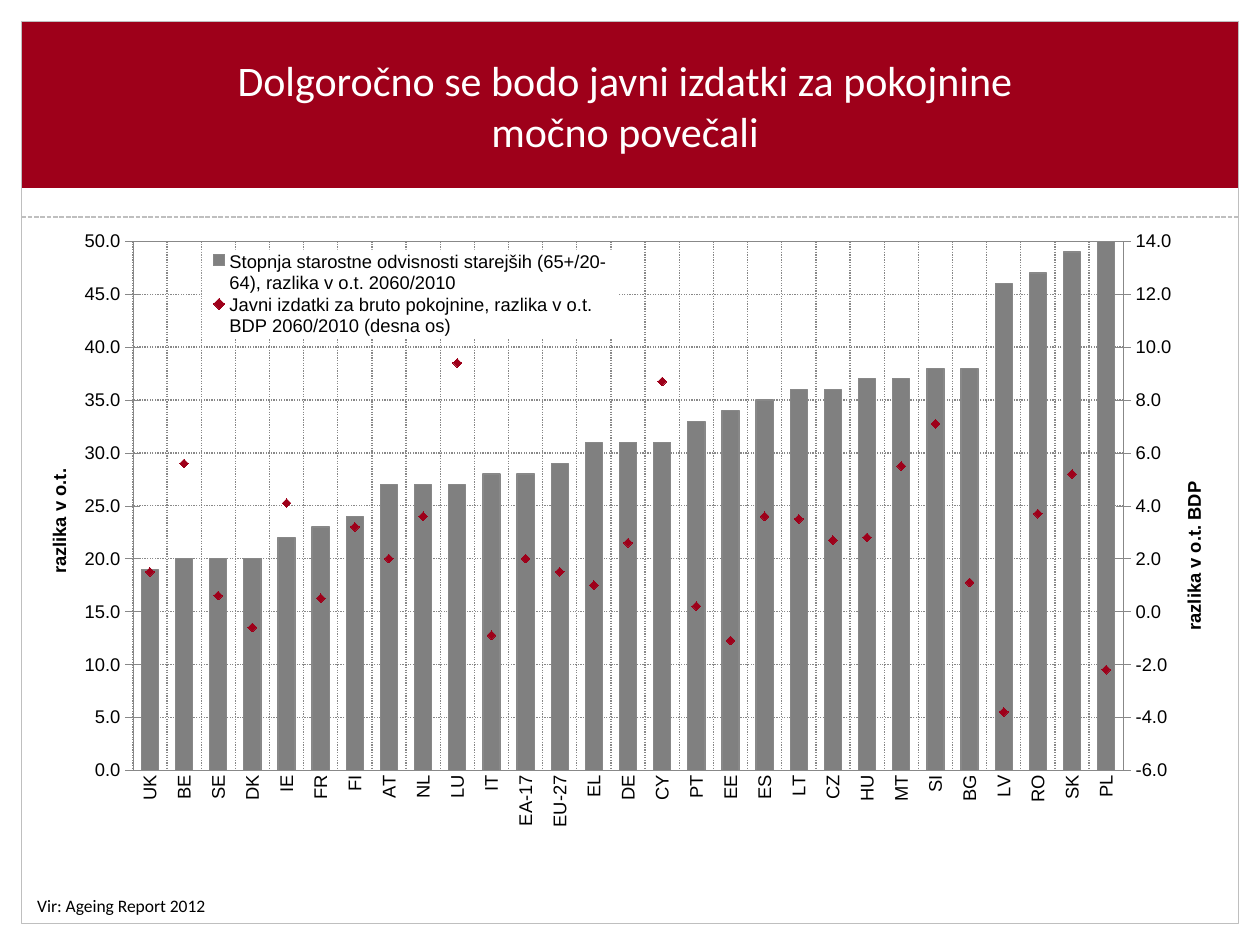
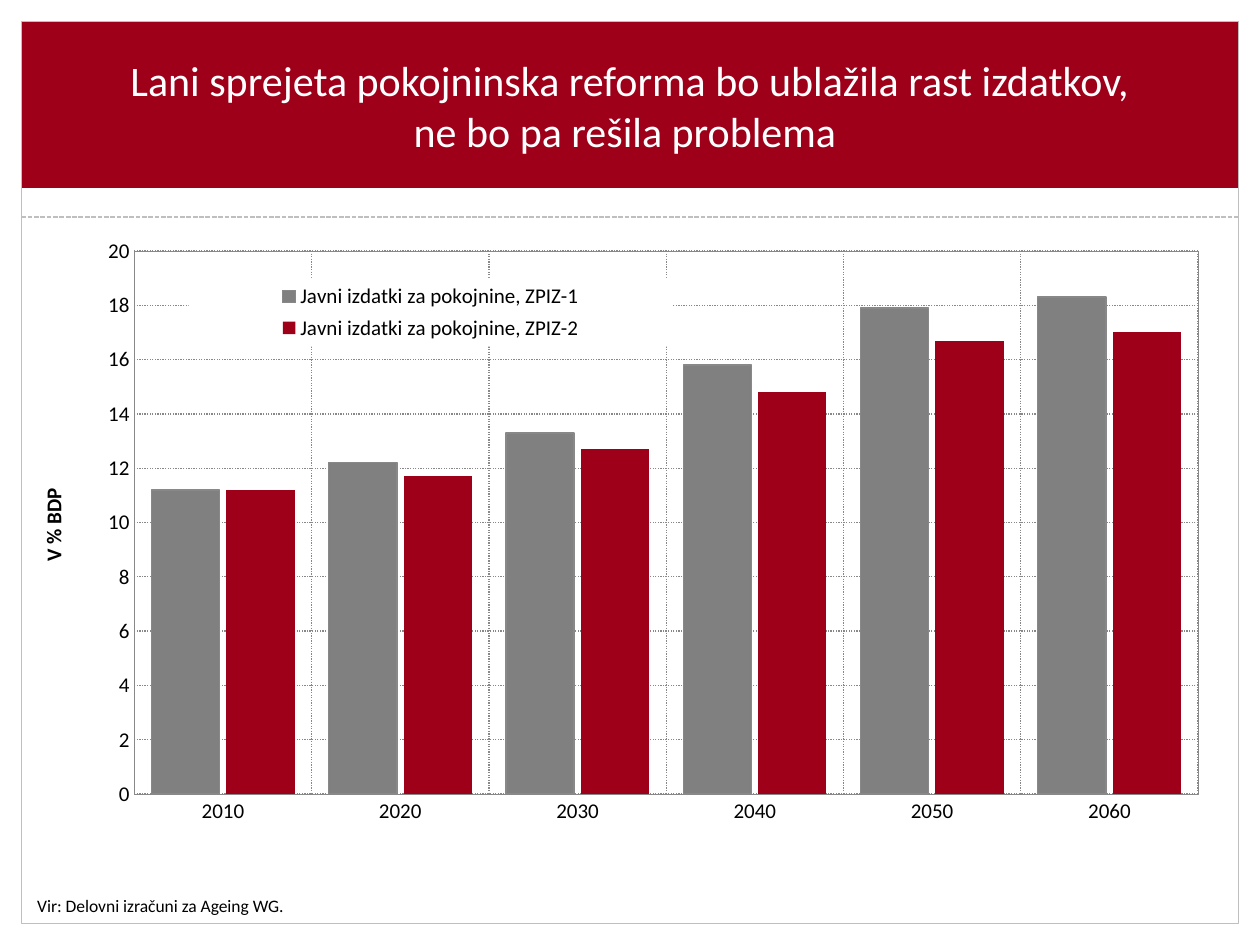
import copy

import pptx
import pptx.chart.axis
import pptx.chart.data
import pptx.dml.color
import pptx.enum.chart
import pptx.enum.dml
import pptx.enum.shapes
import pptx.enum.text
import pptx.oxml
import pptx.oxml.ns
import pptx.util
from pptx.util import Cm, Pt

COLORS = {
    "band": "9E001A",
    "frame": "BFBFBF",
    "bar": "808080",
    "grid": "888888",
    "text": "000000",
    "white": "FFFFFF",
}
TITLE_FONT = "Calibri"
NS = pptx.oxml.ns.nsdecls("c", "a")
qn = pptx.oxml.ns.qn
Tick = pptx.enum.chart.XL_TICK_MARK

DEPENDENCY = {
    "UK": (19, 1.5), "BE": (20, 5.6), "SE": (20, 0.6), "DK": (20, -0.6),
    "IE": (22, 4.1), "FR": (23, 0.5), "FI": (24, 3.2), "AT": (27, 2),
    "NL": (27, 3.6), "LU": (27, 9.4), "IT": (28, -0.9), "EA-17": (28, 2),
    "EU-27": (29, 1.5), "EL": (31, 1), "DE": (31, 2.6), "CY": (31, 8.7),
    "PT": (33, 0.2), "EE": (34, -1.1), "ES": (35, 3.6), "LT": (36, 3.5),
    "CZ": (36, 2.7), "HU": (37, 2.8), "MT": (37, 5.5), "SI": (38, 7.1),
    "BG": (38, 1.1), "LV": (46, -3.8), "RO": (47, 3.7), "SK": (49, 5.2),
    "PL": (50, -2.2),
}
DEPENDENCY_NAMES = (
    "Stopnja starostne odvisnosti starejših (65+/20-64), razlika v o.t. 2060/2010",
    "Javni izdatki za bruto pokojnine, razlika v o.t. BDP 2060/2010 (desna os)",
)
REFORM = {
    "2010": (11.2, 11.2), "2020": (12.2, 11.7), "2030": (13.3, 12.7),
    "2040": (15.8, 14.8), "2050": (17.9, 16.7), "2060": (18.3, 17),
}
REFORM_NAMES = (
    "Javni izdatki za pokojnine, ZPIZ-1",
    "Javni izdatki za pokojnine, ZPIZ-2",
)


def rgb(name):
    return pptx.dml.color.RGBColor.from_string(COLORS[name])


def fill_with(fmt, name):
    fmt.fill.solid()
    fmt.fill.fore_color.rgb = rgb(name)


def set_line(line, name, width=0.75):
    line.color.rgb = rgb(name)
    line.width = Pt(width)


def set_font(font, name, size, color="text", bold=False):
    font.name = name
    font.size = Pt(size)
    font.bold = bold
    font.color.rgb = rgb(color)


def add_text(s, box, text, size, color):
    tf = s.shapes.add_textbox(*map(Cm, box)).text_frame
    tf.text = text
    for p in tf.paragraphs:
        for r in p.runs:
            set_font(r.font, TITLE_FONT, size, color)
    return tf


def add_rect(s, box, fill=None):
    sp = s.shapes.add_shape(
        pptx.enum.shapes.MSO_SHAPE.RECTANGLE, *map(Cm, box))
    sp.shadow.inherit = False
    if fill:
        fill_with(sp, fill)
        sp.line.fill.background()
    else:
        sp.fill.background()
        set_line(sp.line, "frame")


def add_frame(s, box):
    """White margins, red title band, grey slide border and dashed divider."""
    x, y, w, h = box
    page_w = w + 2 * x
    for margin in ((0, y + h, page_w, y), (0, 0, page_w, y),
                   (x + w + 0.03, 0, x - 0.03, 19),
                   (x, y + 3.15, w, 0.84)):
        add_rect(s, margin, "white")
    add_rect(s, (x, y, w, 3.36), "band")
    add_rect(s, box)
    divider = s.shapes.add_connector(
        pptx.enum.shapes.MSO_CONNECTOR.STRAIGHT,
        Cm(x), Cm(y + 3.94), Cm(x + w), Cm(y + 3.94))
    set_line(divider.line, "frame", 0.9)
    divider.line.dash_style = pptx.enum.dml.MSO_LINE.SQUARE_DOT
    divider._element.spPr.append(
        pptx.oxml.parse_xml(f"<a:effectLst {NS}/>"))


def add_slide(prs, title, source):
    s = prs.slides.add_slide(prs.slide_layouts[6])
    add_frame(s, (0.43, 0.43, 24.54, 18.19))
    tf = add_text(s, (1.9, 0.73, 21.59, 2.79), title, 24, "white")
    tf.word_wrap = True
    tf.vertical_anchor = pptx.enum.text.MSO_ANCHOR.MIDDLE
    tf.paragraphs[0].alignment = pptx.enum.text.PP_ALIGN.CENTER
    tf = add_text(s, (0.5, 17.92, 5.7, 0.69), source, 10, "text")
    tf.word_wrap = False
    return s


def place(element, index, x, y, w=None, h=None, inner=False):
    """Give a chart part a manual layout, in fractions of the chart."""
    old = element.find(qn("c:layout"))
    if old is not None:
        element.remove(old)
    target = '<c:layoutTarget val="inner"/>' if inner else ""
    size = f'<c:w val="{w}"/><c:h val="{h}"/>' if w else ""
    element.insert(index, pptx.oxml.parse_xml(
        f'<c:layout {NS}><c:manualLayout>{target}<c:xMode val="edge"/>'
        f'<c:yMode val="edge"/><c:x val="{x}"/><c:y val="{y}"/>{size}'
        "</c:manualLayout></c:layout>"))


def style_gridlines(axis):
    axis.has_major_gridlines = True
    line = axis.major_gridlines.format.line
    set_line(line, "grid")
    line.dash_style = pptx.enum.dml.MSO_LINE.ROUND_DOT


def style_value_axis(axis, title, at, scale, number_format, tick, font):
    axis.minimum_scale, axis.maximum_scale, axis.major_unit = scale
    axis.major_tick_mark = tick
    axis.minor_tick_mark = Tick.NONE
    axis.tick_labels.number_format = number_format
    axis.tick_labels.number_format_is_linked = False
    set_font(axis.tick_labels.font, *font)
    set_line(axis.format.line, "grid", 0.25)
    tf = axis.axis_title.text_frame
    tf.text = title
    set_font(tf.paragraphs[0].runs[0].font, *font, bold=True)
    body = tf._txBody.bodyPr
    body.set("rot", "-5400000")
    body.set("vert", "horz")
    place(axis.axis_title._element, 1, *at)


def add_columns(s, box, names, rows, font, gap, overlap, plot_at, legend_at):
    """Column chart with dotted grid and a white legend over the plot."""
    data = pptx.chart.data.CategoryChartData(number_format="0.0")
    data.categories = list(rows)
    for name, values in zip(names, zip(*rows.values())):
        data.add_series(name, values)
    chart = s.shapes.add_chart(
        pptx.enum.chart.XL_CHART_TYPE.COLUMN_CLUSTERED,
        *map(Cm, box), data).chart
    chart.has_title = False
    set_font(chart.font, *font)
    plot = chart.plots[0]
    plot.vary_by_categories = False
    plot.gap_width = gap
    plot.overlap = overlap
    for series, color in zip(plot.series, ("bar", "band")):
        fill_with(series.format, color)
    set_line(plot.series[0].format.line, "grid")

    cat = chart.category_axis
    cat.major_tick_mark = cat.minor_tick_mark = Tick.NONE
    set_font(cat.tick_labels.font, *font)
    set_line(cat.format.line, "grid", 0.25)
    for axis in (cat, chart.value_axis):
        style_gridlines(axis)

    area = chart._chartSpace.chart.plotArea
    place(area, 0, *plot_at, inner=True)
    area.append(pptx.oxml.parse_xml(
        f'<c:spPr {NS}><a:noFill/><a:ln w="3175"><a:solidFill>'
        f'<a:srgbClr val="{COLORS["grid"]}"/></a:solidFill></a:ln></c:spPr>'))

    chart.has_legend = True
    legend = chart.legend
    legend.position = pptx.enum.chart.XL_LEGEND_POSITION.RIGHT
    legend.include_in_layout = False
    set_font(legend.font, *font)
    place(legend._element, 1, *legend_at)
    legend._element.find(qn("c:txPr")).addprevious(pptx.oxml.parse_xml(
        f'<c:spPr {NS}><a:solidFill><a:srgbClr val="{COLORS["white"]}"/>'
        "</a:solidFill></c:spPr>"))
    return chart


def move_to_right_axis(chart):
    """Turn the second series into markers on a new right-hand axis."""
    bars = chart.plots[0]._element
    series = bars.findall(qn("c:ser"))[1]
    inverted = series.find(qn("c:invertIfNegative"))
    if inverted is not None:
        series.remove(inverted)
    lines = pptx.oxml.parse_xml(
        f'<c:lineChart {NS}><c:grouping val="standard"/><c:varyColors val="0"/>'
        '<c:marker val="1"/><c:axId val="5001"/><c:axId val="5002"/></c:lineChart>')
    lines.insert(2, series)
    bars.addnext(lines)

    left = chart.value_axis._element
    right, hidden = copy.deepcopy(left), copy.deepcopy(chart.category_axis._element)
    for element, own, other in ((hidden, "5001", "5002"), (right, "5002", "5001")):
        element.find(qn("c:axId")).set("val", own)
        element.find(qn("c:crossAx")).set("val", other)
    right.find(qn("c:axPos")).set("val", "r")
    right.find(qn("c:crosses")).set("val", "max")
    left.addnext(right)
    right.addnext(hidden)
    hidden_axis = pptx.chart.axis.CategoryAxis(hidden)
    hidden_axis.visible = False
    hidden_axis.has_major_gridlines = False
    right_axis = pptx.chart.axis.ValueAxis(right)
    right_axis.has_major_gridlines = False

    points = chart.plots[1].series[0]
    points.smooth = False
    points.format.line.fill.background()
    points.marker.style = pptx.enum.chart.XL_MARKER_STYLE.DIAMOND
    points.marker.size = 5
    fill_with(points.marker.format, "band")
    set_line(points.marker.format.line, "band")
    return right_axis


def dependency_slide(prs):
    s = add_slide(
        prs, "Dolgoročno se bodo javni izdatki za pokojnine \vmočno povečali ",
        "Vir: Ageing Report 2012")
    font = ("Arial", 10.5)
    chart = add_columns(
        s, (0.71, 4.52, 24, 12.8), DEPENDENCY_NAMES, DEPENDENCY, font, 100, 0,
        (0.082, 0.027, 0.832, 0.833), (0.14, 0.04, 0.35, 0.14))
    left_axis = chart.value_axis
    right_axis = move_to_right_axis(chart)
    style_value_axis(left_axis, "razlika v o.t.", (0.007, 0.38),
                     (0, 50, 5), "0.0", Tick.CROSS, font)
    style_value_axis(right_axis, "razlika v o.t. BDP", (0.96, 0.4),
                     (-6, 14, 2), "0.0", Tick.CROSS, font)
    labels = chart.category_axis._element.find(qn("c:txPr"))
    labels.find(qn("a:bodyPr")).set("rot", "-5400000")


def reform_slide(prs):
    s = add_slide(
        prs, "Lani sprejeta pokojninska reforma bo ublažila rast izdatkov, "
        "ne bo pa rešila problema ", "Vir: Delovni izračuni za Ageing WG.")
    font = (TITLE_FONT, 12)
    chart = add_columns(
        s, (0.71, 4.72, 23.8, 12.6), REFORM_NAMES, REFORM, font, 50, -10,
        (0.084, 0.027, 0.901, 0.869), (0.13, 0.07, 0.41, 0.11))
    style_value_axis(chart.value_axis, "V % BDP", (0, 0.4),
                     (0, 20, 2), "#,##0", Tick.NONE, font)


def main():
    prs = pptx.Presentation()
    prs.slide_width, prs.slide_height = Cm(25.4), Cm(19.05)
    dependency_slide(prs)
    reform_slide(prs)
    prs.save("out.pptx")


if __name__ == "__main__":
    main()
